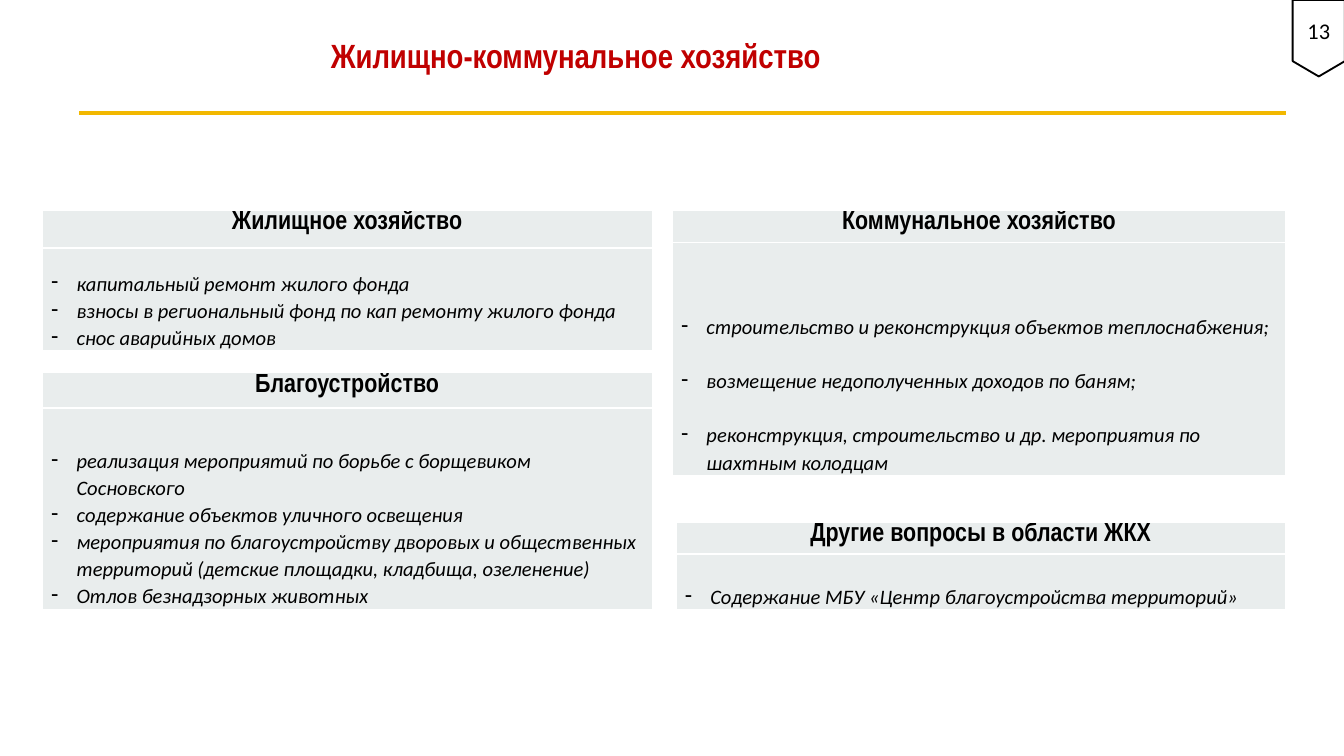
from lxml import etree
from pptx import Presentation
from pptx.dml.color import RGBColor
from pptx.enum import shapes, text
from pptx.oxml import ns
from pptx.util import Pt

HEADING = {"name": "Arial Narrow", "size": Pt(14), "bold": True}
TITLE = {**HEADING, "size": Pt(18)}
ITEM = {"name": "Calibri", "size": Pt(11), "bold": False, "italic": True}
NUMBER = {"name": "Calibri", "size": Pt(12)}

# left, top, width, row heights, gap between items, heading, items
SECTIONS = [
    (22.5, 112.5, 327, (20.5, 55), 0, "Жилищное хозяйство", [
        "капитальный ремонт жилого фонда",
        "взносы в региональный фонд по кап ремонту жилого фонда",
        "снос аварийных домов"]),
    (360, 112.5, 329, (16.5, 125), 14.5, "Коммунальное хозяйство", [
        "строительство и реконструкция объектов теплоснабжения;",
        "возмещение недополученных доходов по баням;",
        "реконструкция, строительство и др. мероприятия по шахтным колодцам"]),
    (22.5, 199.5, 327, (19, 108), 0, "Благоустройство", [
        "реализация мероприятий по борьбе с борщевиком Сосновского",
        "содержание объектов уличного освещения",
        "мероприятия по благоустройству дворовых и общественных территорий "
        "(детские площадки, кладбища, озеленение)",
        "Отлов безнадзорных животных"]),
    (362, 279.5, 327, (15.5, 30), 0, "Другие вопросы в области ЖКХ", [
        "Содержание МБУ «Центр благоустройства территорий»"]),
]


def color(code):
    return RGBColor.from_string(code)


def set_all(target, values):
    for name, value in values.items():
        setattr(target, name, value)


def child(parent, tag, **attributes):
    return etree.SubElement(parent, ns.qn(tag), attributes)


class Page:
    panel, border, ink = "E9EDED", "FFFFFF", "000000"
    accent, rule_color = "C00000", "F2B800"

    def __init__(self, deck):
        self.slide = deck.slides.add_slide(deck.slide_layouts[6])

    def add_span(self, para, words, font, ink=None):
        span = para.add_run()
        span.text = words
        set_all(span.font, font)
        span.font.color.rgb = color(ink or self.ink)

    def add_centred(self, para, words, font, ink=None):
        para.alignment = text.PP_ALIGN.CENTER
        self.add_span(para, words, font, ink)

    def title(self, words, *place):
        box = self.slide.shapes.add_textbox(*map(Pt, place))
        set_all(box.text_frame, {"word_wrap": True,
                                 "auto_size": text.MSO_AUTO_SIZE.SHAPE_TO_FIT_TEXT})
        self.add_centred(box.text_frame.paragraphs[0], words, TITLE, self.accent)

    def rule(self, left, right, y):
        line = self.slide.shapes.add_connector(
            shapes.MSO_CONNECTOR.STRAIGHT, Pt(left), Pt(y), Pt(right), Pt(y))
        line.line.color.rgb = color(self.rule_color)
        line.line.width = Pt(2.25)
        child(line._element.spPr, "a:effectLst")

    def number_tag(self, words, *place):
        tag = self.slide.shapes.add_shape(
            shapes.MSO_SHAPE.FLOWCHART_OFFPAGE_CONNECTOR, *map(Pt, place))
        tag.shadow.inherit = False
        tag.fill.solid()
        tag.fill.fore_color.rgb = color(self.border)
        tag.line.color.rgb = color(self.ink)
        tag.line.width = Pt(1)
        set_all(tag.text_frame, {
            "margin_left": 0, "margin_right": 0, "margin_top": 0, "margin_bottom": 0,
            "vertical_anchor": text.MSO_ANCHOR.MIDDLE})
        self.add_centred(tag.text_frame.paragraphs[0], words, NUMBER)

    def style_cell(self, cell, side, top, anchor):
        set_all(cell, {"margin_left": Pt(side), "margin_right": Pt(side),
                       "margin_top": Pt(top), "margin_bottom": 0,
                       "vertical_anchor": anchor})
        cell.fill.solid()
        cell.fill.fore_color.rgb = color(self.panel)
        properties = cell._tc.get_or_add_tcPr()
        for index, edge in enumerate(("a:lnL", "a:lnR", "a:lnT", "a:lnB")):
            line = child(properties, edge, w=str(Pt(1)))
            child(child(line, "a:solidFill"), "a:srgbClr", val=self.border)
            properties.insert(index, line)

    def bullet(self, para, words):
        properties = para._p.get_or_add_pPr()
        properties.set("marL", str(Pt(13.5)))
        properties.set("indent", str(-Pt(13.5)))
        child(properties, "a:buChar", char="-")
        para.line_spacing = 1.07
        self.add_span(para, words, ITEM)

    def section(self, left, top, width, heights, gap, heading, items):
        """Draw a one-column table: a heading row over a bulleted list."""
        table = self.slide.shapes.add_table(
            2, 1, Pt(left), Pt(top), Pt(width), Pt(sum(heights))).table
        set_all(table, {"first_row": False, "horz_banding": False})
        for row, height in zip(table.rows, heights):
            row.height = Pt(height)
        head, body = table.cell(0, 0), table.cell(1, 0)
        self.style_cell(head, 0.5, 0.5, text.MSO_ANCHOR.TOP)
        self.style_cell(body, 5, 0, text.MSO_ANCHOR.BOTTOM)
        self.add_centred(head.text_frame.paragraphs[0], heading, HEADING)
        frame = body.text_frame
        for index, item in enumerate(items):
            para = frame.add_paragraph() if index else frame.paragraphs[0]
            self.bullet(para, item)
            if index and gap:
                para.space_before = Pt(gap)


def main():
    deck = Presentation()
    set_all(deck, {"slide_width": Pt(720), "slide_height": Pt(405)})
    page = Page(deck)
    page.rule(42.5, 689, 60.5)
    page.title("Жилищно-коммунальное хозяйство", 54, 15, 509, 29)
    for section in SECTIONS:
        page.section(*section)
    page.number_tag("13", 692.5, 0, 28, 41)
    deck.save("out.pptx")


if __name__ == "__main__":
    main()
